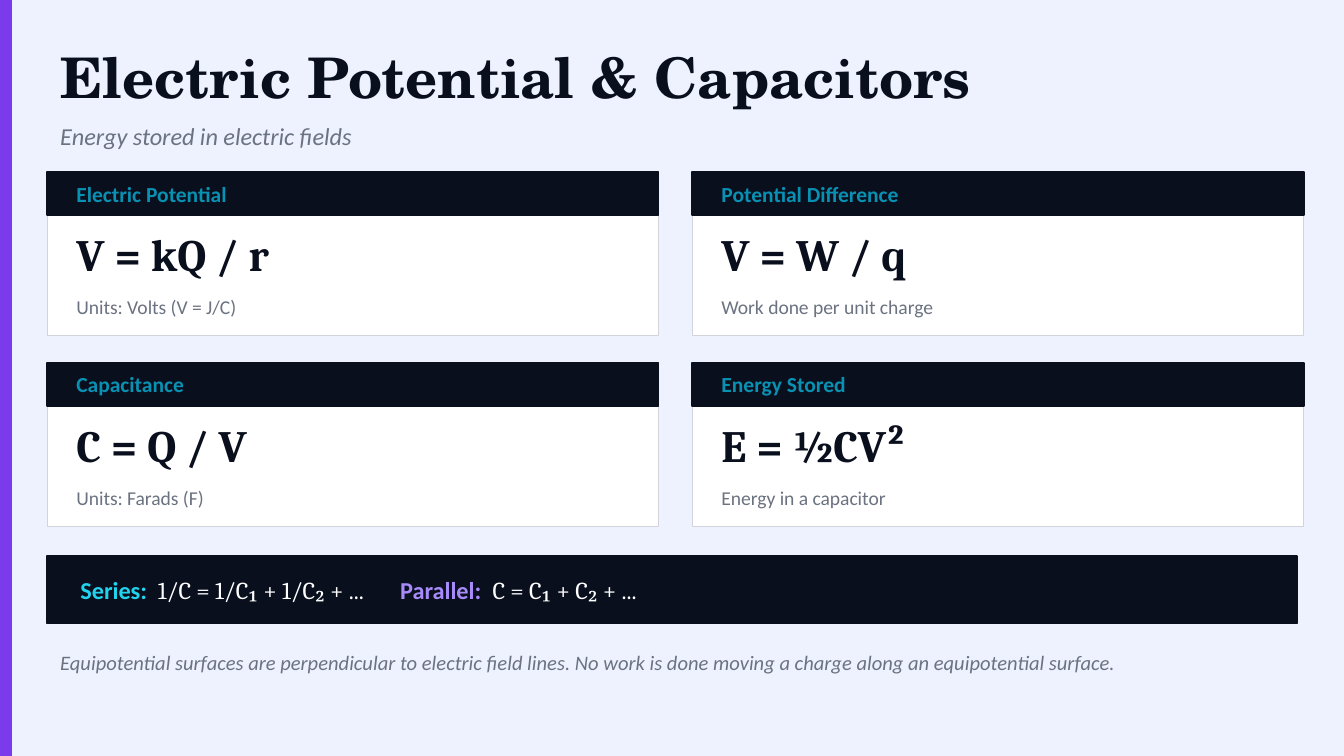
from dataclasses import dataclass

import pptx
import pptx.dml.color
import pptx.enum.shapes
import pptx.enum.text
import pptx.oxml.ns
import pptx.util
from lxml import etree

COLORS = {
    "page": "EEF2FF", "accent": "7C3AED", "ink": "0A0F1E", "muted": "6B7280",
    "card": "FFFFFF", "border": "D1D5DB", "heading": "0891B2",
    "series": "22D3EE", "parallel": "A78BFA",
}
WIDTH = pptx.util.Inches(10)
HEIGHT = WIDTH * 9 // 16
UNIT = WIDTH / 100  # every Box is measured in hundredths of the slide width
MARGIN, CARD_TOP = 3.5, 12.8
CARD_W, CARD_H, HEADER_H = 45.5, 12.2, 3.2
COL_STEP, ROW_STEP = 48, 14.2
TEXT_INDENT, TEXT_W = 1.2, 43


@dataclass(frozen=True)
class Box:
    left: float
    top: float
    width: float
    height: float

    def emu(self) -> list[int]:
        return [round(v * UNIT) for v in (self.left, self.top, self.width, self.height)]


@dataclass(frozen=True)
class Style:
    size: float
    color: str
    name: str = "Calibri"
    bold: bool = False
    italic: bool = False


@dataclass(frozen=True)
class Card:
    heading: str
    formula: str
    note: str


TITLE = Style(30, "ink", "TeX Gyre Schola", bold=True)
SUBTITLE = Style(13, "muted", italic=True)
HEADING = Style(11.5, "heading", bold=True)
FORMULA = Style(24, "ink", "Cambria", bold=True)
NOTE = Style(10.5, "muted")
FOOTNOTE = Style(11, "muted", italic=True)
RULE = Style(13, "card", "Cambria")

CARDS = [
    Card("Electric Potential", "V = kQ / r", "Units: Volts (V = J/C)"),
    Card("Potential Difference", "V = W / q", "Work done per unit charge"),
    Card("Capacitance", "C = Q / V", "Units: Farads (F)"),
    Card("Energy Stored", "E = ½CV²", "Energy in a capacitor"),
]
COMBINATIONS = [
    ("Series:\t", Style(13, "series", bold=True)),
    ("1/C = 1/C₁ + 1/C₂ + ...\t", RULE),
    ("Parallel:\t", Style(13, "parallel", bold=True)),
    ("C = C₁ + C₂ + ...", RULE),
]
COMBINATION_TABS = [5.77, 23.8, 30.67]


def rgb(key: str) -> pptx.dml.color.RGBColor:
    return pptx.dml.color.RGBColor.from_string(COLORS[key])


def set_font(font, style: Style) -> None:
    font.size = pptx.util.Pt(style.size)
    font.name = style.name
    font.bold, font.italic = style.bold, style.italic
    font.color.rgb = rgb(style.color)


def place(sp, box: Box) -> None:
    sp.left, sp.top, sp.width, sp.height = box.emu()


def prepare_frame(sp):
    """Make the text wrap, sit mid-height and start at the left; return its paragraph."""
    tf = sp.text_frame
    tf.word_wrap = True
    tf.auto_size = pptx.enum.text.MSO_AUTO_SIZE.NONE
    tf.vertical_anchor = pptx.enum.text.MSO_ANCHOR.MIDDLE
    p = tf.paragraphs[0]
    p.alignment = pptx.enum.text.PP_ALIGN.LEFT
    return p


def add_rect(s, box: Box, fill: str, line: str, line_pt: float = 1) -> None:
    sp = s.shapes.add_shape(pptx.enum.shapes.MSO_SHAPE.RECTANGLE, *box.emu())
    sp.shadow.inherit = False
    sp.fill.solid()
    sp.fill.fore_color.rgb = rgb(fill)
    sp.line.color.rgb = rgb(line)
    sp.line.width = pptx.util.Pt(line_pt)


def add_text(s, box: Box, text: str, style: Style) -> None:
    p = prepare_frame(s.shapes.add_textbox(*box.emu()))
    p.text = text
    set_font(p.font, style)


def add_card(s, card: Card, col: int, row: int) -> None:
    left, top = MARGIN + col * COL_STEP, CARD_TOP + row * ROW_STEP
    text_left = left + TEXT_INDENT
    add_rect(s, Box(left, top, CARD_W, CARD_H), "card", "border", 0.5)
    add_rect(s, Box(left, top, CARD_W, HEADER_H), "ink", "ink")
    add_text(s, Box(text_left, top, TEXT_W, HEADER_H), card.heading, HEADING)
    add_text(s, Box(text_left, top + 3.8, TEXT_W, 4.6), card.formula, FORMULA)
    add_text(s, Box(text_left, top + 8.6, TEXT_W, 2.8), card.note, NOTE)


def add_tab_stops(p, stops: list[float]) -> None:
    qn = pptx.oxml.ns.qn
    tabs = etree.SubElement(p._p.get_or_add_pPr(), qn("a:tabLst"))
    for stop in stops:
        etree.SubElement(tabs, qn("a:tab"), pos=str(round(stop * UNIT)), algn="l")


def add_combinations(s) -> None:
    add_rect(s, Box(MARGIN, 41.4, 93, 5), "ink", "ink")
    p = prepare_frame(s.shapes.add_textbox(*Box(5, 41.4, 91, 5).emu()))
    add_tab_stops(p, COMBINATION_TABS)
    for text, style in COMBINATIONS:
        r = p.add_run()
        r.text = text
        set_font(r.font, style)


def main() -> None:
    prs = pptx.Presentation()
    prs.slide_width, prs.slide_height = WIDTH, HEIGHT
    s = prs.slides.add_slide(prs.slide_layouts[5])
    s.background.fill.solid()
    s.background.fill.fore_color.rgb = rgb("page")

    title = s.shapes.title
    place(title, Box(MARGIN, 2.6, 90, 6.2))
    p = prepare_frame(title)
    p.text = "Electric Potential & Capacitors"
    set_font(p.font, TITLE)

    add_rect(s, Box(0, 0, 0.8, HEIGHT / UNIT), "accent", "accent")
    add_text(s, Box(MARGIN, 8.6, 70, 3), "Energy stored in electric fields", SUBTITLE)
    for i, card in enumerate(CARDS):
        add_card(s, card, col=i % 2, row=i // 2)
    add_combinations(s)
    add_text(
        s, Box(MARGIN, 47.4, 93, 3.8),
        "Equipotential surfaces are perpendicular to electric field lines. "
        "No work is done moving a charge along an equipotential surface.",
        FOOTNOTE,
    )
    prs.save("out.pptx")


if __name__ == "__main__":
    main()
